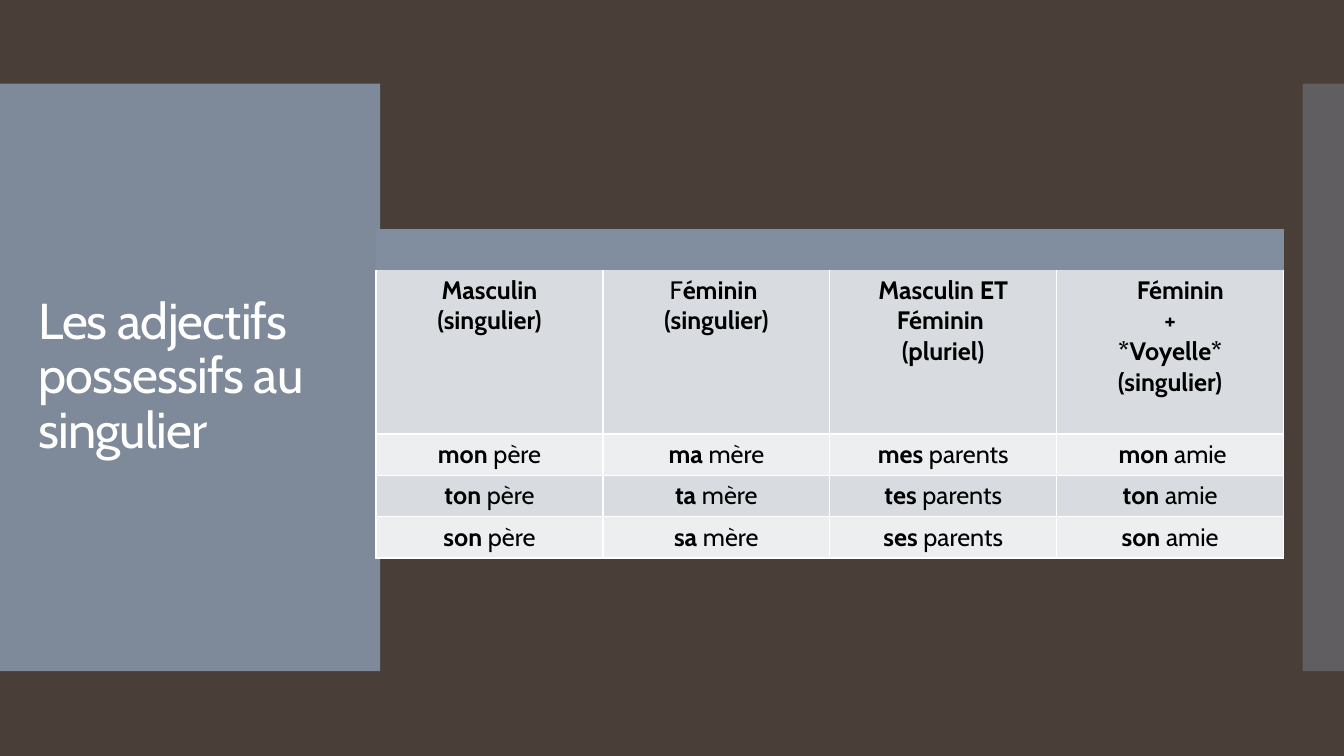
from pptx import Presentation
from pptx.dml.color import RGBColor
from pptx.enum.shapes import MSO_SHAPE
from pptx.enum.text import MSO_ANCHOR, PP_ALIGN
from pptx.oxml import parse_xml
from pptx.oxml.ns import nsdecls, qn
from pptx.util import Inches, Pt
from lxml import etree

BROWN = RGBColor(0x4A, 0x3F, 0x38)
SLATE = RGBColor(0x81, 0x8E, 0x9F)
GREY = RGBColor(0xD8, 0xDB, 0xDF)
PALE = RGBColor(0xED, 0xEE, 0xF0)
WHITE = RGBColor(0xFF, 0xFF, 0xFF)
BLACK = RGBColor(0x00, 0x00, 0x00)

# Each heading is a list of lines: (left indent, [(text, bold), ...])
HEADINGS = [
    [(0, [("Masculin", True)]), (0, [("(singulier)", True)])],
    [(0, [("F", False), ("éminin ", True)]), (0, [("(singulier)", True)])],
    [(0, [("Masculin ET Féminin ", True)]), (0, [("(pluriel)", True)])],
    [(0.26, [("Féminin ", True)]), (0, [("+", True)]),
     (0, [("*Voyelle*", True)]), (0, [("(singulier)", True)])],
]
OWNERS = ["m", "t", "s"]
ENDINGS = [("on", "père"), ("a", "mère"), ("es", "parents"), ("on", "amie")]


class SlideBuilder:
    """Holds the text style and the current slide."""

    font_name = "Cabin"

    def __init__(self, presentation):
        self.slide = presentation.slides.add_slide(presentation.slide_layouts[6])

    def background(self, color):
        fill = self.slide.background.fill
        fill.solid()
        fill.fore_color.rgb = color

    def panel(self, left, top, width, height, color, opacity):
        shape = self.slide.shapes.add_shape(
            MSO_SHAPE.RECTANGLE, Inches(left), Inches(top), Inches(width), Inches(height))
        shape.shadow.inherit = False
        shape.fill.solid()
        shape.fill.fore_color.rgb = color
        shape.line.fill.background()
        color_element = shape.fill._xPr.find(qn("a:solidFill"))[0]
        etree.SubElement(color_element, qn("a:alpha"), val=str(opacity * 1000))

    def run(self, paragraph, text, size, color, bold=False):
        run = paragraph.add_run()
        run.text = text
        values = {"name": self.font_name, "size": Pt(size), "bold": bold}
        for name, value in values.items():
            setattr(run.font, name, value)
        run.font.color.rgb = color
        return run

    def title(self, left, top, width, height, text):
        shape = self.slide.shapes.add_textbox(
            Inches(left), Inches(top), Inches(width), Inches(height))
        values = {"word_wrap": True, "vertical_anchor": MSO_ANCHOR.MIDDLE}
        for name, value in values.items():
            setattr(shape.text_frame, name, value)
        paragraph = shape.text_frame.paragraphs[0]
        paragraph.line_spacing = 0.9
        run = self.run(paragraph, text, 36, WHITE)
        run.font._element.set("spc", "-60")

    def table(self, left, top, column_widths, row_heights):
        table_shape = self.slide.shapes.add_table(
            len(row_heights), len(column_widths), Inches(left), Inches(top),
            Inches(sum(column_widths)), Inches(sum(row_heights)))
        table = table_shape.table
        for column, width in zip(table.columns, column_widths):
            column.width = Inches(width)
        for row, height in zip(table.rows, row_heights):
            row.height = Inches(height)
        return table

    def cell(self, cell, color, lines=(), sides=""):
        # Borders come before the fill in the cell properties
        properties = cell._tc.get_or_add_tcPr()
        for side in "LRTB":
            paint = (f'<a:solidFill><a:srgbClr val="{WHITE}"/></a:solidFill>'
                     if side in sides else "<a:noFill/>")
            properties.append(parse_xml(
                f'<a:ln{side} {nsdecls("a")} w="{Pt(1)}">{paint}</a:ln{side}>'))
        cell.fill.solid()
        cell.fill.fore_color.rgb = color

        frame = cell.text_frame
        for index, (indent, pieces) in enumerate(lines):
            paragraph = frame.add_paragraph() if index else frame.paragraphs[0]
            paragraph.alignment = PP_ALIGN.CENTER
            if indent:
                paragraph._p.get_or_add_pPr().set("marL", str(Inches(indent)))
            for text, bold in pieces:
                self.run(paragraph, text, 18, BLACK, bold)


def main():
    presentation = Presentation()
    presentation.slide_width = Inches(13.33)
    presentation.slide_height = Inches(7.5)
    builder = SlideBuilder(presentation)

    # Background and side panels
    builder.background(BROWN)
    builder.panel(0, 0.83, 3.77, 5.83, SLATE, 95)
    builder.panel(12.92, 0.83, 0.41, 5.83, SLATE, 40)

    # Table: merged band, headings, then one row per owner
    table = builder.table(3.73, 2.27, [2.25] * 4, [0.4, 1.63] + [0.41] * 3)
    for column in range(4):
        builder.cell(table.cell(0, column), SLATE)
        builder.cell(table.cell(1, column), GREY, HEADINGS[column], "LRB")
    table.cell(0, 0).merge(table.cell(0, 3))
    for row, owner in enumerate(OWNERS, start=2):
        color = GREY if row % 2 else PALE
        for column, (ending, noun) in enumerate(ENDINGS):
            indent = 0.05 if (row, column) == (2, 3) else 0
            pieces = [(f"{owner}{ending} ", True), (noun, False)]
            builder.cell(table.cell(row, column), color, [(indent, pieces)], "LRTB")

    # Title
    builder.title(0.28, 1.23, 3.22, 5.03, "Les adjectifs possessifs au singulier")

    presentation.save("out.pptx")


if __name__ == "__main__":
    main()
